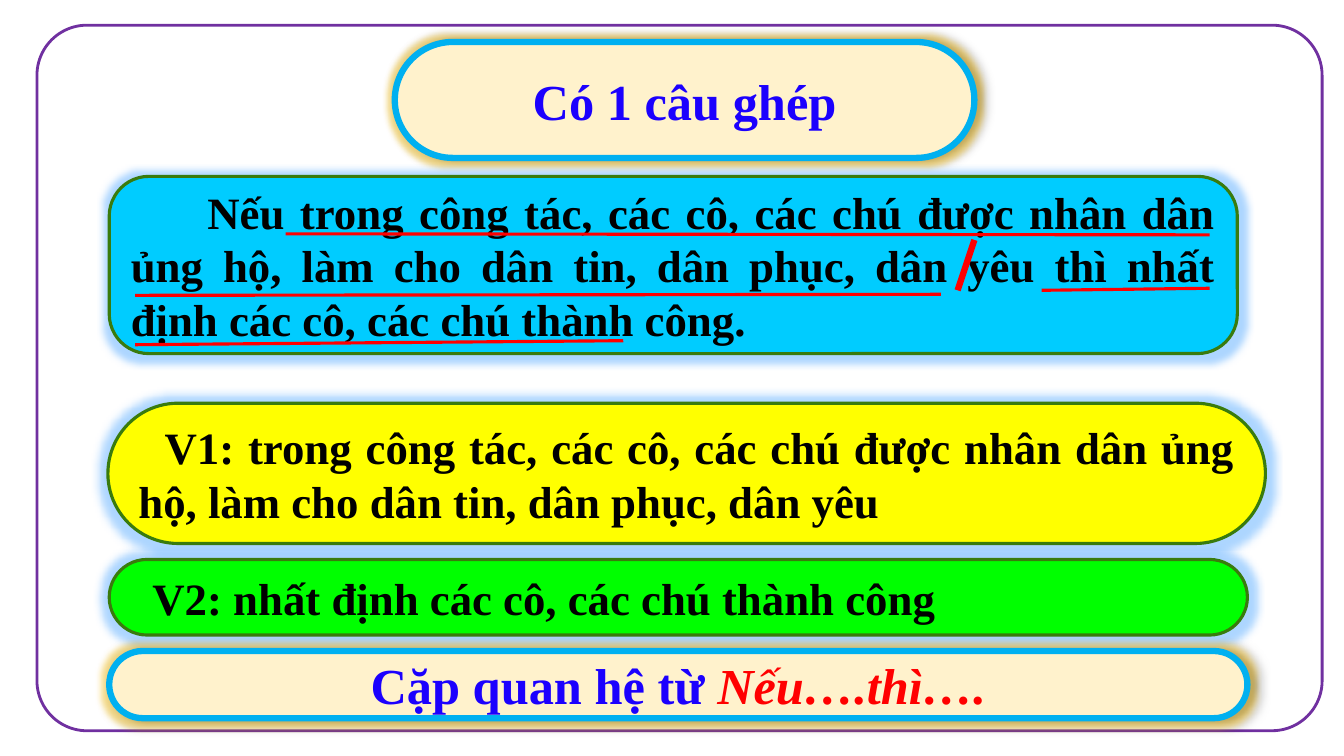
from dataclasses import dataclass

from lxml import etree
from pptx import Presentation
from pptx.dml.color import RGBColor
from pptx.enum.shapes import MSO_CONNECTOR, MSO_SHAPE
from pptx.enum.text import MSO_ANCHOR, PP_ALIGN
from pptx.oxml.ns import qn
from pptx.util import Inches, Pt

ROUNDED = MSO_SHAPE.ROUNDED_RECTANGLE
STRAIGHT = MSO_CONNECTOR.STRAIGHT
MIDDLE = MSO_ANCHOR.MIDDLE
CENTER, JUSTIFY = PP_ALIGN.CENTER, PP_ALIGN.JUSTIFY
COLUMNS, ROWS = 160, 90


@dataclass(frozen=True)
class Theme:
    font: str = "Times New Roman"
    heading_size: int = 36
    body_size: int = 32
    heading: str = "1B00FE"
    body: str = "000000"
    mark: str = "FF0000"
    cream: str = "FFF2CC"
    sky: str = "00CCFF"
    yellow: str = "FFFF00"
    green: str = "00FF00"
    banner_edge: str = "00B0F0"
    clause_edge: str = "397B0D"
    frame_edge: str = "7030A0"
    gold_glow: str = "FFC000"
    blue_glow: str = "3399FF"
    shadow: str = "000000"


THEME = Theme()
FRAME = (4.4, 3, 153, 84)
TITLE = (47, 5, 69, 13.8)
SENTENCE = (13, 21, 134.3, 21.1)
CLAUSE_ONE = (12.85, 48, 137.8, 16.7)
CLAUSE_TWO = (13, 66.6, 135.5, 9)
CONJUNCTIONS = (13, 77.5, 135.5, 8)
UNDERLINES = [
    (21, 6.84, 131, 6.96),
    (3.1, 20.04, 61.2, 19.56),
    (111, 13.56, 131, 13.32),
    (3.1, 14.16, 99, 14.04),
]
CLAUSE_BREAK = (103, 7.56, 101, 13.56)


def grid(value):
    return Inches(value / 12)


def color(value):
    return RGBColor.from_string(value)


def add_effect(effects, tag, rgb, alpha, **settings):
    effect = etree.SubElement(effects, qn(tag))
    for key, value in settings.items():
        effect.set(key, str(int(value)))
    tint = etree.SubElement(effect, qn("a:srgbClr"), val=rgb)
    etree.SubElement(tint, qn("a:alpha"), val=str(alpha * 1000))


def add_panel(slide, box, rounding, fill, edge, width):
    panel = slide.shapes.add_shape(ROUNDED, *map(grid, box))
    panel.adjustments[0] = rounding
    panel.shadow.inherit = False
    if fill:
        panel.fill.solid()
        panel.fill.fore_color.rgb = color(fill)
    else:
        panel.fill.background()
    panel.line.color.rgb = color(edge)
    panel.line.width = Pt(width)
    return panel


def write(panel, parts, size, align):
    frame = panel.text_frame
    frame.word_wrap = True
    frame.vertical_anchor = MIDDLE
    paragraph = frame.paragraphs[0]
    paragraph.alignment = align
    paragraph.font.name = THEME.font
    paragraph.font.size = Pt(size)
    paragraph.font.bold = True
    for text, ink, italic in parts:
        run = paragraph.add_run()
        run.text = text
        run.font.color.rgb = color(ink)
        run.font.italic = italic
    return paragraph


def add_banner(slide, box, parts):
    banner = add_panel(slide, box, 0.5, THEME.cream, THEME.banner_edge, 4.5)
    effects = banner._element.spPr.find(qn("a:effectLst"))
    add_effect(effects, "a:glow", THEME.gold_glow, 40, rad=Pt(8))
    add_effect(effects, "a:outerShdw", THEME.shadow, 40,
               blurRad=Pt(4), dist=Pt(3), dir=0)
    write(banner, parts, THEME.heading_size, CENTER)


def add_clause(slide, box, rounding, fill, text, indent):
    clause = add_panel(slide, box, rounding, fill, THEME.clause_edge, 2.25)
    effects = clause._element.spPr.find(qn("a:effectLst"))
    add_effect(effects, "a:glow", THEME.blue_glow, 40, rad=Pt(11))
    paragraph = write(clause, [(text, THEME.body, False)], THEME.body_size, JUSTIFY)
    paragraph._p.get_or_add_pPr().set("indent", str(Inches(indent)))


def add_mark(slide, box, ends, width):
    left, top = box[:2]
    x1, y1, x2, y2 = ends
    mark = slide.shapes.add_connector(
        STRAIGHT, grid(left + x1), grid(top + y1), grid(left + x2), grid(top + y2))
    mark.line.color.rgb = color(THEME.mark)
    mark.line.width = Pt(width)
    etree.SubElement(mark._element.spPr, qn("a:effectLst"))


def add_sentence(slide, box):
    add_clause(slide, box, 0.224, THEME.sky,
               "Nếu trong công tác, các cô, các chú được nhân dân ủng hộ, "
               "làm cho dân tin, dân phục, dân yêu thì nhất định các cô, "
               "các chú thành công.", 0.76)


def add_sentence_marks(slide, box):
    add_mark(slide, box, CLAUSE_BREAK, 4.5)
    for underline in UNDERLINES:
        add_mark(slide, box, underline, 2.25)


def main():
    deck = Presentation()
    deck.slide_width, deck.slide_height = grid(COLUMNS), grid(ROWS)
    slide = deck.slides.add_slide(deck.slide_layouts[6])
    add_banner(slide, TITLE, [("Có 1 câu ghép", THEME.heading, False)])
    add_panel(slide, FRAME, 0.071, None, THEME.frame_edge, 2)
    add_sentence(slide, SENTENCE)
    add_clause(slide, CLAUSE_ONE, 0.5, THEME.yellow,
               "V1: trong công tác, các cô, các chú được nhân dân ủng hộ, "
               "làm cho dân tin, dân phục, dân yêu", 0.26)
    add_clause(slide, CLAUSE_TWO, 0.5, THEME.green,
               "V2: nhất định các cô, các chú thành công", 0.22)
    add_sentence_marks(slide, SENTENCE)
    add_banner(slide, CONJUNCTIONS, [
        ("Cặp quan hệ từ ", THEME.heading, False),
        ("Nếu….thì….", THEME.mark, True),
    ])
    deck.save("out.pptx")


if __name__ == "__main__":
    main()
